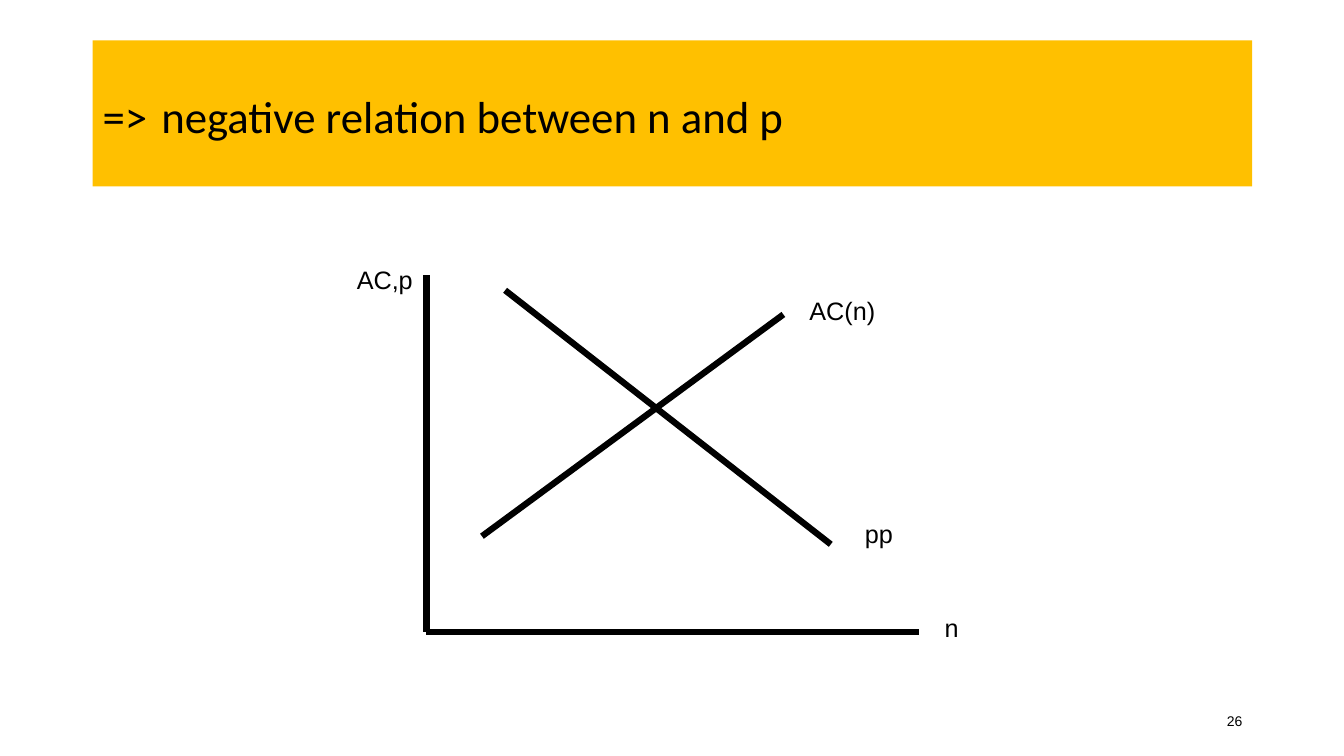
from dataclasses import dataclass

from pptx import Presentation
from pptx.dml.color import RGBColor
from pptx.enum.shapes import MSO_CONNECTOR, MSO_SHAPE
from pptx.enum.text import MSO_ANCHOR, PP_ALIGN
from pptx.oxml.ns import qn
from pptx.util import Pt
from lxml.etree import SubElement

SCALE = 9144  # EMU in one px, 100 px to the inch


@dataclass(frozen=True)
class Theme:
    ink: RGBColor = RGBColor(0, 0, 0)
    band: RGBColor = RGBColor(0xFF, 0xC0, 0x00)
    head: str = "Calibri"
    body: str = "Arial"
    title: int = 32
    gap: int = 44
    label: int = 18
    page: int = 10
    stroke: float = 4.5


class Board:
    """Draws on one slide in the style of a theme."""

    def __init__(self, slide, theme):
        self.slide = slide
        self.theme = theme

    def style(self, run, face, size):
        font = run.font
        font.name = face
        font.size = Pt(size)
        font.color.rgb = self.theme.ink

    def title(self, box, parts):
        """Filled band whose text is a list of (words, size) parts."""
        shape = self.slide.shapes.add_shape(
            MSO_SHAPE.RECTANGLE, *(v * SCALE for v in box))
        shape.shadow.inherit = False
        shape.fill.solid()
        shape.fill.fore_color.rgb = self.theme.band
        shape.line.fill.background()
        frame = shape.text_frame
        frame.vertical_anchor = MSO_ANCHOR.MIDDLE
        para = frame.paragraphs[0]
        para.alignment = PP_ALIGN.LEFT
        para.line_spacing = 0.9
        for words, size in parts:
            run = para.add_run()
            run.text = words
            self.style(run, self.theme.head, size)

    def text(self, box, words, size, align=PP_ALIGN.LEFT,
             anchor=MSO_ANCHOR.TOP):
        shape = self.slide.shapes.add_textbox(*(v * SCALE for v in box))
        frame = shape.text_frame
        frame.word_wrap = True
        frame.vertical_anchor = anchor
        frame.text = words
        para = frame.paragraphs[0]
        para.alignment = align
        self.style(para.runs[0], self.theme.body, size)

    def line(self, *ends):
        """Straight line through x1, y1, x2, y2."""
        link = self.slide.shapes.add_connector(
            MSO_CONNECTOR.STRAIGHT, *(v * SCALE for v in ends))
        link.line.color.rgb = self.theme.ink
        link.line.width = Pt(self.theme.stroke)
        SubElement(link.element.spPr, qn("a:effectLst"))


def main():
    deck = Presentation()
    deck.slide_width = 1333 * SCALE
    deck.slide_height = 750 * SCALE
    theme = Theme()
    board = Board(deck.slides.add_slide(deck.slide_layouts[6]), theme)

    board.title((92, 40, 1150, 145), [
        ("=>", theme.title),
        (" ", theme.gap),
        ("negative relation between n and p", theme.title),
    ])

    left, base = 423, 627
    board.line(left, 273, left, base)
    board.line(left, base, 911, base)
    board.line(478, 532, 777, 312)
    board.line(501, 288, 824, 540)

    labels = [
        ("n", 927, 603, 55),
        ("AC,p", 344, 257, 79),
        ("AC(n)", 793, 288, 94),
        ("pp", 848, 509, 95),
    ]
    for words, x, y, width in labels:
        board.text((x, y, width, 40), words, theme.label)

    board.text((942, 695, 300, 40), "26", theme.page,
               PP_ALIGN.RIGHT, MSO_ANCHOR.MIDDLE)
    deck.save("out.pptx")


if __name__ == "__main__":
    main()
